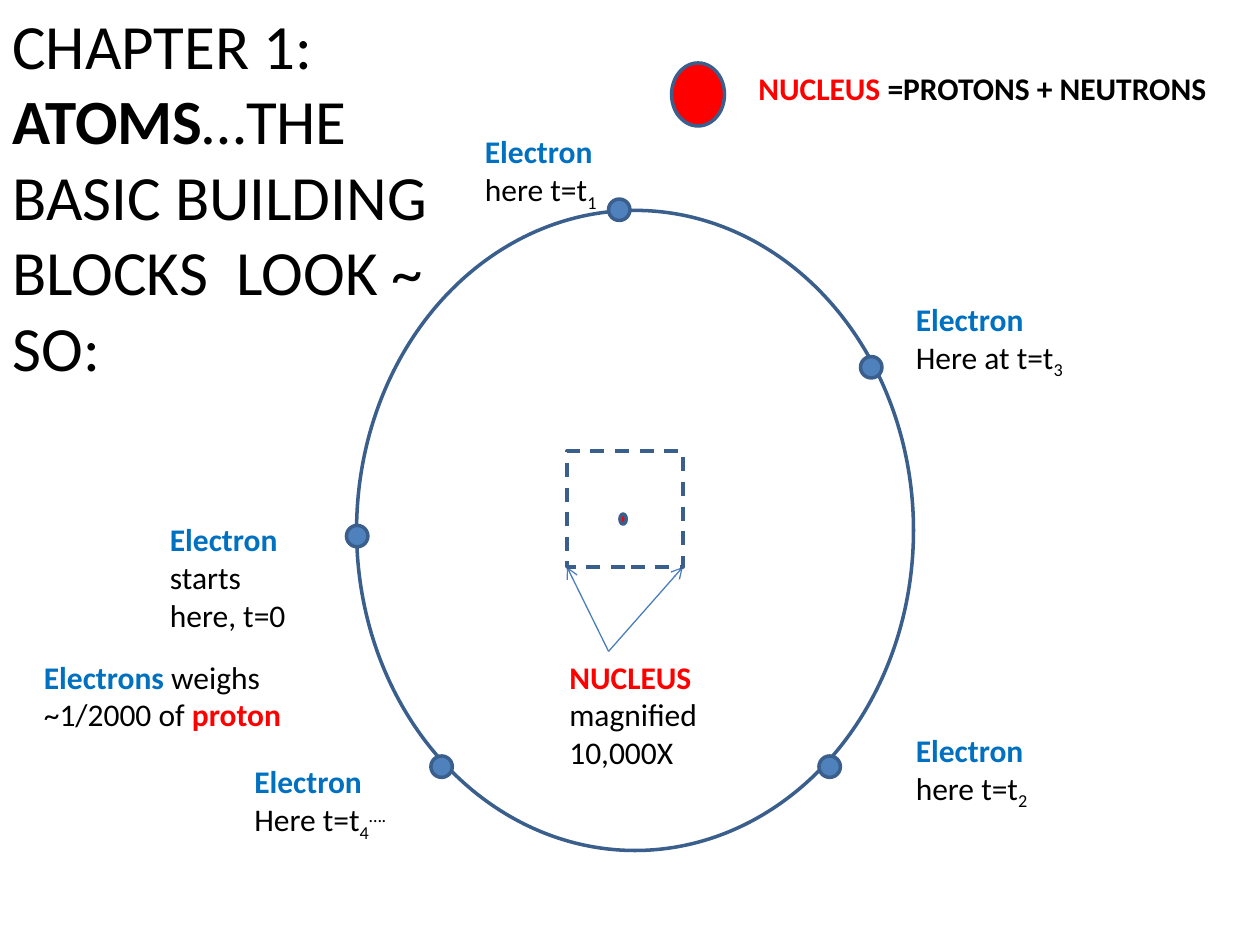
"""Build a slide that sketches an atom with its nucleus and moving electron."""
from pptx import Presentation
from pptx.dml.color import RGBColor
from pptx.enum.dml import MSO_LINE
from pptx.enum.shapes import MSO_CONNECTOR, MSO_SHAPE
from pptx.enum.text import MSO_AUTO_SIZE
from pptx.oxml.ns import qn
from pptx.util import Inches, Pt
from lxml.etree import SubElement

BLUE = RGBColor(0x00, 0x70, 0xC0)
RED = RGBColor(0xFF, 0x00, 0x00)
BLACK = RGBColor(0x00, 0x00, 0x00)
DOT = RGBColor(0x4F, 0x81, 0xBD)
EDGE = RGBColor(0x3A, 0x5F, 0x8C)
ARROW = RGBColor(0x4B, 0x7E, 0xBC)
SUB, SUPER = -25, 30


def add_form(slide, kind, box, fill=None):
    shape = slide.shapes.add_shape(kind, *map(Inches, box))
    shape.shadow.inherit = False
    if fill is None:
        shape.fill.background()
    else:
        shape.fill.solid()
        shape.fill.fore_color.rgb = fill
    shape.line.color.rgb = EDGE
    shape.line.width = Pt(2)
    return shape


def add_arrow(slide, tail, tip):
    line = slide.shapes.add_connector(MSO_CONNECTOR.STRAIGHT, *map(Inches, tail + tip))
    line.line.color.rgb = ARROW
    line.line.width = Pt(0.75)
    SubElement(line.line._get_or_add_ln(), qn("a:tailEnd"), type="arrow")
    SubElement(line._element.spPr, qn("a:effectLst"))


def add_run(par, size, text, color=BLACK, bold=False, shift=0):
    run = par.add_run()
    run.text = text
    font = run.font
    font.name, font.size, font.bold = "Calibri", Pt(size), bold
    font.color.rgb = color
    if shift:
        run._r.get_or_add_rPr().set("baseline", str(shift * 1000))


def add_text(slide, box, *lines, size=18):
    frame = slide.shapes.add_textbox(*map(Inches, box)).text_frame
    frame.word_wrap = True
    frame.auto_size = MSO_AUTO_SIZE.SHAPE_TO_FIT_TEXT
    for index, runs in enumerate(lines):
        par = frame.add_paragraph() if index else frame.paragraphs[0]
        for run in runs:
            add_run(par, size, *run)


def add_atom(slide):
    add_form(slide, MSO_SHAPE.OVAL, (2.83, 1.67, 4.42, 5.08))
    add_form(slide, MSO_SHAPE.OVAL, (4.92, 4.08, 0.05, 0.08), RED)
    for tip in (4.5, 5.42):
        add_arrow(slide, (4.83, 5.17), (tip, 4.5))
    frame = add_form(slide, MSO_SHAPE.RECTANGLE, (4.5, 3.58, 0.92, 0.92))
    frame.line.dash_style = MSO_LINE.DASH
    for left, top in ((2.75, 4.17), (4.83, 1.58), (6.5, 6), (3.42, 6), (6.83, 2.83)):
        add_form(slide, MSO_SHAPE.OVAL, (left, top, 0.17, 0.17), DOT)
    add_form(slide, MSO_SHAPE.OVAL, (5.33, 0.5, 0.42, 0.5), RED)


def add_labels(slide):
    name = ("Electron", BLUE, True)
    add_text(slide, (1.25, 4.08, 1.25, 1.01), [name, (" starts here, t=0",)])
    add_text(slide, (4.42, 5.17, 1.58, 1.01),
             [("NUCLEUS ", RED, True), ("magnified 10,000X",)])
    add_text(slide, (3.75, 1, 1.42, 0.71),
             [("Electron ", BLUE, True), ("here t=t",), ("1", BLACK, False, SUB)])
    stops = (
        ((7.17, 5.75, 2.17, 0.71), "here t=t", "2", []),
        ((1.92, 6, 1.5, 0.71), "Here t=t", "4", [("….", BLACK, False, SUPER)]),
        ((7.17, 2.33, 1.92, 0.71), "Here at t=t", "3", []),
    )
    for box, text, mark, rest in stops:
        add_text(slide, box, [name], [(text,), (mark, BLACK, False, SUB), *rest])
    add_text(slide, (5.92, 0.5, 4.08, 0.4),
             [("NUCLEUS", RED, True), (" =PROTONS + NEUTRONS", BLACK, True)])
    add_text(slide, (0.25, 5.17, 2.17, 0.71),
             [("Electrons ", BLUE, True), ("weighs ~1/2000 of ",), ("proton", RED, True)])
    add_text(slide, (0, 0, 3.75, 3.9),
             [("CHAPTER 1: ",), ("ATOMS", BLACK, True),
              ("…THE BASIC BUILDING BLOCKS  LOOK ~ SO:",)], size=36)


def main():
    deck = Presentation()
    deck.slide_width, deck.slide_height = Inches(10), Inches(7.5)
    slide = deck.slides.add_slide(deck.slide_layouts[6])
    add_atom(slide)
    add_labels(slide)
    deck.save("out.pptx")


if __name__ == "__main__":
    main()
